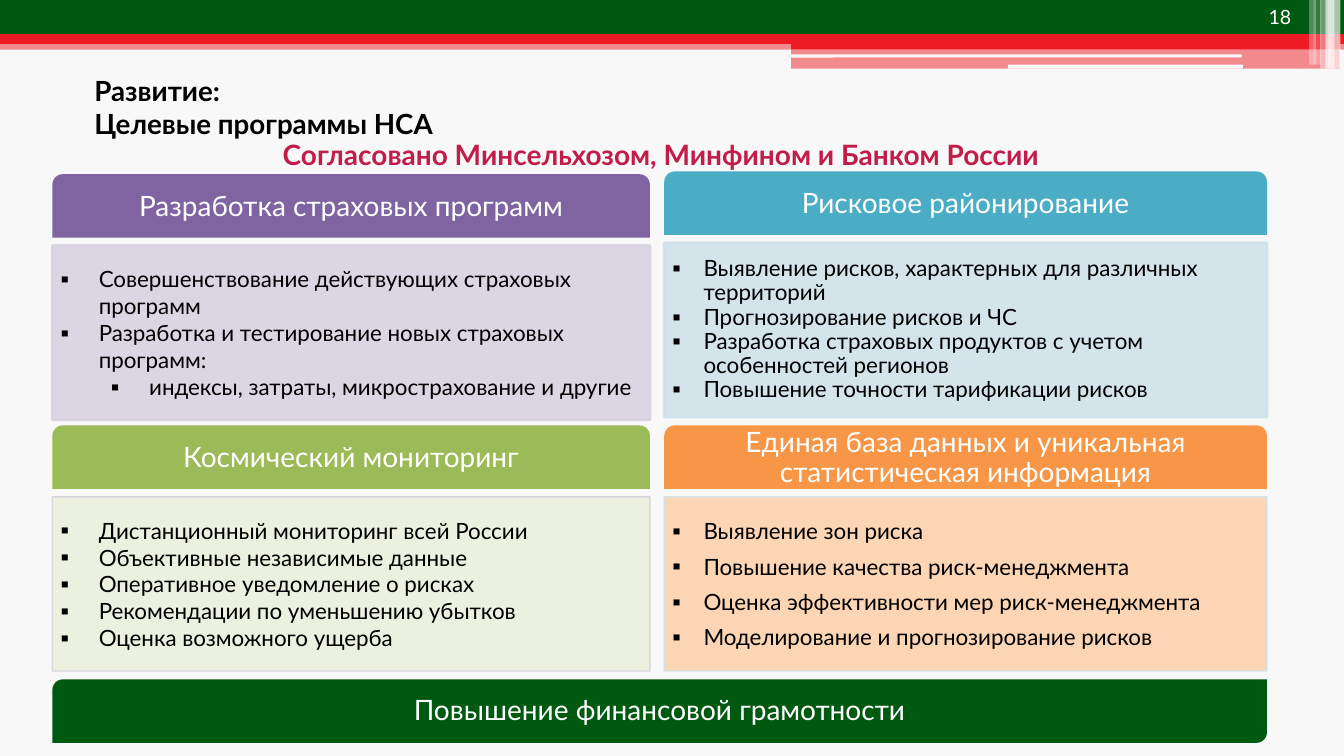
from dataclasses import dataclass

from lxml import etree
from pptx import Presentation, util as u
from pptx.dml.color import RGBColor
from pptx.enum import shapes, text
from pptx.oxml.ns import qn

FONT = "Lato"
GREEN, RED, PAPER, WHITE, BLACK = "005910", "ED1C24", "F8F8F8", "FFFFFF", "000000"
PRESET = shapes.MSO_SHAPE
CENTER = text.PP_ALIGN.CENTER
MIDDLE = text.MSO_ANCHOR.MIDDLE
HEADER_HEIGHT, BODY_OFFSET, BODY_HEIGHT = 1.6, 1.8, 4.39


@dataclass
class Band:
    left: float
    top: float
    width: float
    height: float
    color: str
    opacity: int = 100
    preset: int = PRESET.RECTANGLE


@dataclass
class Program:
    left: float
    top: float
    width: float
    title: str
    header_color: str
    body_color: str
    border_color: str
    points: list[str]
    subpoints: tuple[str, ...] = ()
    opacity: int = 100
    border_width: float = 1
    hanging: float = 0.79
    line_spacing: float = 1.0
    space_after: float = 0


def paint(color_holder, color: str, opacity: int = 100) -> None:
    color_holder.solid()
    color_holder.fore_color.rgb = RGBColor.from_string(color)
    if opacity < 100:
        node = color_holder._xPr.find(qn("a:solidFill"))[0]
        etree.SubElement(node, qn("a:alpha"), val=str(opacity * 1000))


def add_block(band: Band):
    block = slide.shapes.add_shape(
        band.preset, *map(u.Cm, (band.left, band.top, band.width, band.height)))
    block.shadow.inherit = False
    paint(block.fill, band.color, band.opacity)
    block.line.fill.background()
    return block


def add_label(left: float, top: float, width: float, height: float):
    return slide.shapes.add_textbox(*map(u.Cm, (left, top, width, height)))


def add_bullet(paragraph, margin: float, hanging: float) -> None:
    props = paragraph._p.get_or_add_pPr()
    props.set("marL", str(u.Cm(margin)))
    props.set("indent", str(-u.Cm(hanging)))
    etree.SubElement(props, qn("a:buFont"), typeface=FONT)
    etree.SubElement(props, qn("a:buChar"), char="▪")


def write(holder, lines: list[str], *, size: float, color: str = BLACK,
          bold: bool = False, align=text.PP_ALIGN.LEFT, anchor=text.MSO_ANCHOR.TOP,
          inset: tuple[float, float] = (0.25, 0.13), line_spacing: float = 1.0,
          space_after: float = 0, hanging: float = 0,
          deeper: tuple[str, ...] = ()) -> None:
    frame = holder.text_frame
    frame.word_wrap = True
    frame.vertical_anchor = anchor
    frame.margin_left = frame.margin_right = u.Cm(inset[0])
    frame.margin_top = frame.margin_bottom = u.Cm(inset[1])
    for number, line in enumerate([*lines, *deeper]):
        paragraph = frame.add_paragraph() if number else frame.paragraphs[0]
        paragraph.text = line
        paragraph.alignment = align
        paragraph.line_spacing = line_spacing
        paragraph.space_after = u.Pt(space_after)
        if hanging:
            add_bullet(paragraph, hanging + (1.27 if line in deeper else 0), hanging)
        for run in paragraph.runs:
            run.font.name = FONT
            run.font.size = u.Pt(size)
            run.font.bold = bold
            run.font.color.rgb = RGBColor.from_string(color)


def add_header(band: Band, title: str) -> None:
    write(add_block(band), [title], size=20, color=WHITE, align=CENTER,
          anchor=MIDDLE, inset=(0.41, 0.23), line_spacing=0.9)


def add_program(program: Program) -> None:
    add_header(Band(program.left, program.top, program.width, HEADER_HEIGHT,
                    program.header_color, preset=PRESET.ROUND_2_SAME_RECTANGLE),
               program.title)
    body = add_block(Band(program.left, program.top + BODY_OFFSET, program.width,
                          BODY_HEIGHT, program.body_color, program.opacity))
    paint(body.line.fill, program.border_color, 90)
    body.line.width = u.Pt(program.border_width)
    write(body, program.points, deeper=program.subpoints, size=16, anchor=MIDDLE,
          inset=(0.2, 0.2), hanging=program.hanging,
          line_spacing=program.line_spacing, space_after=program.space_after)


LEFT, LEFT_WIDTH = 1.32, 15.06
RIGHT, RIGHT_WIDTH = 16.74, 15.19
LOWER = 10.72

BANDS = [
    Band(0, 1.02, 33.87, 0.23, RED, 50),
    Band(0, 0, 33.87, 0.86, GREEN),
    Band(0, 0.86, 33.87, 0.25, RED),
    Band(19.94, 0.99, 13.82, 0.25, RED),
    Band(19.94, 1.22, 13.82, 0.51, RED, 50),
    Band(19.94, 1.37, 11.35, 0.08, PAPER, preset=PRESET.ROUNDED_RECTANGLE),
    Band(25.4, 1.63, 5.92, 0.1, PAPER, preset=PRESET.ROUNDED_RECTANGLE),
    Band(33.58, 0, 0.2, 1.73, WHITE, 65),
    Band(33.45, 0, 0.18, 1.73, WHITE, 65),
    Band(33.4, 0, 0.18, 1.73, WHITE, 60),
    Band(33.27, 0, 0.18, 1.73, WHITE, 40),
    Band(33.1, 0, 0.2, 1.63, WHITE, 20),
    Band(32.99, 0, 0.18, 1.63, WHITE, 30),
]

PROGRAMS = [
    Program(LEFT, 4.39, LEFT_WIDTH, "Разработка страховых программ",
            "8064A2", "D8D3E0", "D8D3E0",
            ["Совершенствование действующих страховых программ",
             "Разработка и тестирование новых страховых программ:"],
            subpoints=("индексы, затраты, микрострахование и другие",),
            opacity=90, border_width=2, hanging=0.97),
    Program(RIGHT, 4.32, RIGHT_WIDTH, "Рисковое районирование",
            "4BACC6", "D0E3EA", "D0E3EA",
            ["Выявление рисков, характерных для различных территорий",
             "Прогнозирование рисков и ЧС",
             "Разработка страховых продуктов с учетом особенностей регионов",
             "Повышение точности тарификации рисков"],
            opacity=90, border_width=2, line_spacing=0.9),
    Program(LEFT, LOWER, LEFT_WIDTH, "Космический мониторинг",
            "9BBB59", "EBF1DE", "D8D3E0",
            ["Дистанционный мониторинг всей России",
             "Объективные независимые данные",
             "Оперативное уведомление о рисках",
             "Рекомендации по уменьшению убытков",
             "Оценка возможного ущерба"], hanging=0.97),
    Program(RIGHT, LOWER, RIGHT_WIDTH,
            "Единая база данных и уникальная статистическая информация",
            "F79646", "FCD5B5", "D0E3EA",
            ["Выявление зон риска",
             "Повышение качества риск-менеджмента",
             "Оценка эффективности мер риск-менеджмента",
             "Моделирование и прогнозирование рисков"], space_after=6),
]

deck = Presentation()
deck.slide_width, deck.slide_height = u.Cm(33.87), u.Cm(19.05)
slide = deck.slides.add_slide(deck.slide_layouts[6])
paint(slide.background.fill, PAPER)

for band in BANDS:
    add_block(band)
write(add_label(31.72, 0, 1.73, 0.71), ["18"], size=14, color=WHITE)
write(add_label(2.13, 1.73, 31.01, 1.75), ["Развитие:\vЦелевые программы НСА"],
      size=19.8, bold=True)
for program in PROGRAMS:
    add_program(program)
add_header(Band(LEFT, 17.12, RIGHT + RIGHT_WIDTH - LEFT, HEADER_HEIGHT, GREEN,
                preset=PRESET.ROUND_2_DIAG_RECTANGLE),
           "Повышение финансовой грамотности")
write(add_label(4.39, 3.33, 24.54, 1.22),
      ["Согласовано Минсельхозом, Минфином и Банком России"],
      size=20, color="C21C48", bold=True, align=CENTER)

deck.save("out.pptx")
